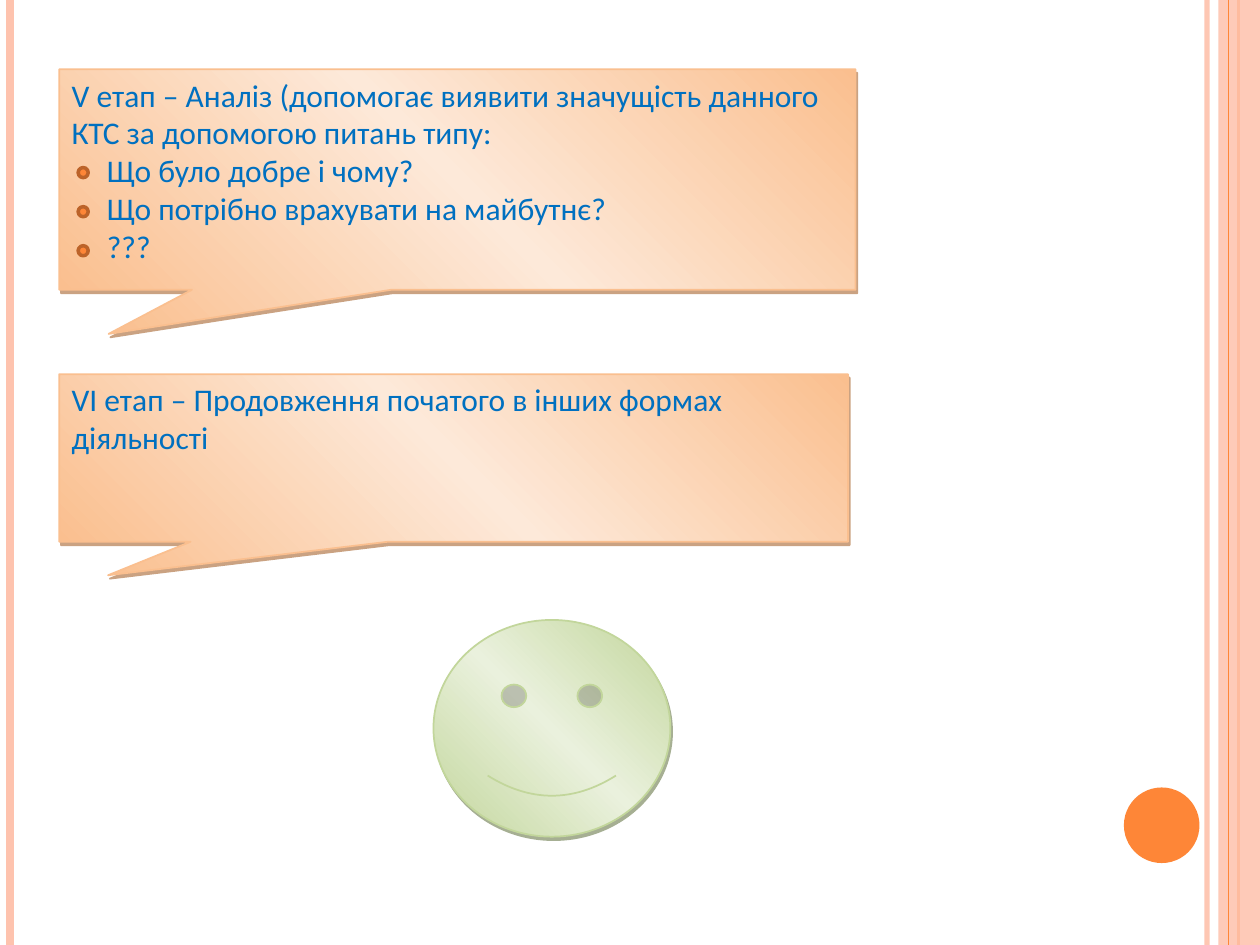
from copy import deepcopy
from dataclasses import dataclass

from lxml import etree
from pptx import Presentation
from pptx.dml.color import RGBColor
from pptx.enum.shapes import MSO_CONNECTOR, MSO_SHAPE
from pptx.enum.text import MSO_ANCHOR, PP_ALIGN
from pptx.oxml.ns import qn
from pptx.util import Inches, Pt

RECTANGLE = MSO_SHAPE.RECTANGLE
ELLIPSE = MSO_SHAPE.OVAL
CALLOUT = MSO_SHAPE.RECTANGULAR_CALLOUT
SMILEY = MSO_SHAPE.SMILEY_FACE
STRAIGHT = MSO_CONNECTOR.STRAIGHT
LEFT = PP_ALIGN.LEFT
TOP = MSO_ANCHOR.TOP


@dataclass(frozen=True)
class Theme:
    font: str = "Calibri"
    text_size: int = 18
    text: str = "0070C0"
    accent: str = "FE8637"
    stripe: str = "FEC3AE"
    bullet_edge: str = "BC6329"
    orange: tuple = ("FABF8F", "FDE9D9", "974706")
    green: tuple = ("C2D69B", "EAF1DD", "4E6128")


THEME = Theme()
SLIDE_HEIGHT = 7.5
BOX_LEFT = 0.47
BULLET_INDENT = 0.28
STRIPES = [
    (9.58, THEME.stripe, 3, 93),
    (0.08, THEME.stripe, 4.5, 100),
    (9.83, THEME.accent, 1.5, 100),
]
ANALYSIS = [
    "V етап – Аналіз (допомогає виявити значущість данного",
    "КТС за допомогою питань типу:",
]
QUESTIONS = ["Що було добре і чому?", "Що потрібно врахувати на майбутнє?", "???"]
CONTINUATION = ["VІ етап – Продовження початого в інших формах діяльності"]


def set_attributes(target, values):
    for name, value in values.items():
        setattr(target, name, value)


def set_alpha(properties, percent):
    color = next(properties.iter(qn("a:srgbClr")))
    etree.SubElement(color, qn("a:alpha"), val=str(percent * 1000))


def add_stripe(slide, x, color, width, opacity=100):
    line = slide.shapes.add_connector(
        STRAIGHT, Inches(x), 0, Inches(x), Inches(SLIDE_HEIGHT))
    line.line.color.rgb = RGBColor.from_string(color)
    line.line.width = Pt(width)
    properties = line._element.spPr
    etree.SubElement(properties, qn("a:effectLst"))
    if opacity < 100:
        set_alpha(properties, opacity)


def add_plain_shape(slide, kind, box, fill, edge=None, edge_width=0):
    shape = slide.shapes.add_shape(kind, *map(Inches, box))
    shape.shadow.inherit = False
    shape.fill.solid()
    shape.fill.fore_color.rgb = RGBColor.from_string(fill)
    if edge:
        shape.line.color.rgb = RGBColor.from_string(edge)
        shape.line.width = Pt(edge_width)
    else:
        shape.line.fill.background()
    return shape


def add_glossy_shape(slide, kind, box, palette, adjustments):
    outer, middle, shade = palette
    shape = add_plain_shape(slide, kind, box, outer, outer, 1)
    for index, value in enumerate(adjustments):
        shape.adjustments[index] = value
    shape.fill.gradient()
    shape.fill.gradient_angle = 45
    properties = shape._element.spPr
    stops = next(properties.iter(qn("a:gsLst")))
    stops.append(deepcopy(stops[0]))
    colors = zip(shape.fill.gradient_stops, (outer, middle, outer), (0, 0.5, 1))
    for stop, color, position in colors:
        stop.color.rgb = RGBColor.from_string(color)
        stop.position = position
    shadow = etree.SubElement(
        properties.find(qn("a:effectLst")), qn("a:outerShdw"),
        blurRad="0", dist=str(Pt(2.2)), dir=str(63 * 60000),
        algn="ctr", rotWithShape="0")
    etree.SubElement(shadow, qn("a:srgbClr"), val=shade)
    set_alpha(shadow, 50)
    return shape


def add_callout(slide, box, lines, questions=()):
    shape = add_glossy_shape(slide, CALLOUT, box, THEME.orange, (-0.438, 0.7))
    frame = shape.text_frame
    set_attributes(frame, {"word_wrap": True, "vertical_anchor": TOP})
    for index, text in enumerate([*lines, *questions]):
        paragraph = frame.paragraphs[0] if index == 0 else frame.add_paragraph()
        paragraph.text = text
        paragraph.alignment = LEFT
        set_attributes(paragraph.font, {"name": THEME.font, "size": Pt(THEME.text_size)})
        paragraph.font.color.rgb = RGBColor.from_string(THEME.text)
        if index >= len(lines):
            paragraph._p.get_or_add_pPr().set("marL", str(Inches(BULLET_INDENT)))


def add_bullets(slide, count):
    for index in range(count):
        box = (0.62, 1.33 + 0.31 * index, 0.08, 0.08)
        add_plain_shape(slide, ELLIPSE, box, THEME.accent, THEME.bullet_edge, 2)


def add_frame(slide):
    for stripe in STRIPES:
        add_stripe(slide, *stripe)
    band = add_plain_shape(
        slide, RECTANGLE, (9.67, 0, 0.33, SLIDE_HEIGHT), THEME.stripe)
    set_alpha(band._element.spPr, 87)
    add_stripe(slide, 9.75, THEME.accent, 0.75)
    add_plain_shape(slide, ELLIPSE, (8.92, 6.25, 0.6, 0.6), THEME.accent)


def main():
    presentation = Presentation()
    set_attributes(presentation, {
        "slide_width": Inches(10), "slide_height": Inches(SLIDE_HEIGHT)})
    slide = presentation.slides.add_slide(presentation.slide_layouts[6])
    add_frame(slide)
    add_callout(slide, (BOX_LEFT, 0.55, 6.32, 1.75), ANALYSIS, QUESTIONS)
    add_callout(slide, (BOX_LEFT, 2.97, 6.26, 1.33), CONTINUATION)
    add_glossy_shape(slide, SMILEY, (3.44, 4.92, 1.88, 1.72), THEME.green, (0.047,))
    add_bullets(slide, len(QUESTIONS))
    presentation.save("out.pptx")


if __name__ == "__main__":
    main()
